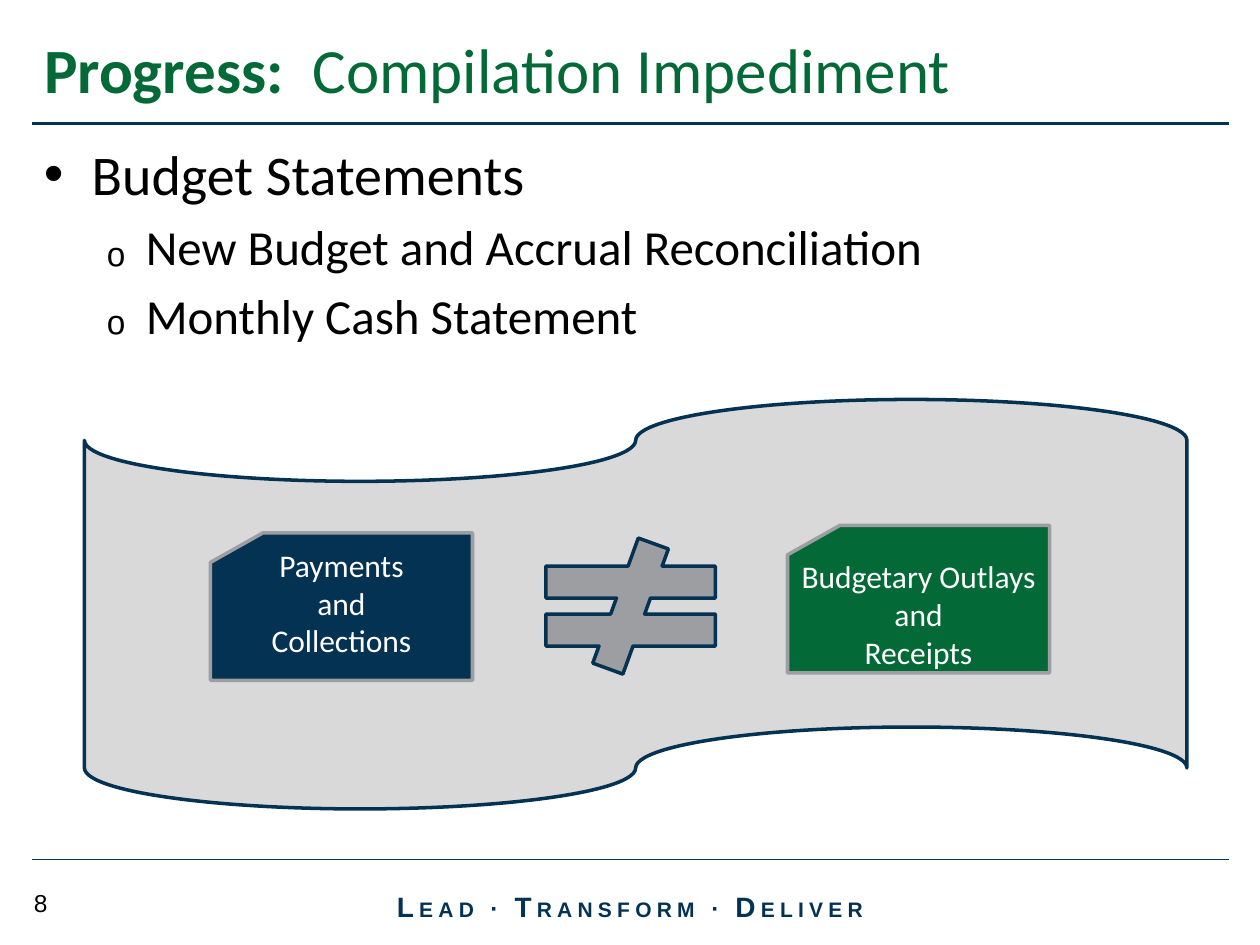
import pptx
import pptx.dml.color
import pptx.enum.shapes
import pptx.enum.text
import pptx.oxml
import pptx.oxml.ns
import pptx.util

RGB = pptx.dml.color.RGBColor
Pt = pptx.util.Pt
Shape = pptx.enum.shapes.MSO_SHAPE
Align = pptx.enum.text.PP_ALIGN
Anchor = pptx.enum.text.MSO_ANCHOR

NAVY = RGB(0x04, 0x32, 0x53)
GREEN = RGB(0x03, 0x6A, 0x37)
GRAY = RGB(0x9C, 0x9E, 0xA2)
PALE = RGB(0xD9, 0xD9, 0xD9)
BLACK = RGB(0, 0, 0)
WHITE = RGB(255, 255, 255)

COLS, ROWS = 40, 30


def style(item, form):
    for key, value in form.items():
        setattr(item, key, value)


class Page:
    """Holds the slide and its grid of quarter-inch cells."""

    def __init__(self, deck):
        self.cell_w = deck.slide_width / COLS
        self.cell_h = deck.slide_height / ROWS
        self.slide = deck.slides.add_slide(deck.slide_layouts[5])
        self.shapes = self.slide.shapes

    def grid(self, x, y, *size):
        units = (self.cell_w, self.cell_h) * 2
        return [round(n * u) for n, u in zip((x, y, *size), units)]

    def runs(self, par, parts, color, face="Calibri"):
        """Add (text, size, bold) parts to a paragraph."""
        for text, size, bold in parts:
            run = par.add_run()
            run.text = text
            style(run.font, {"name": face, "size": Pt(size), "bold": bold})
            run.font.color.rgb = color
            yield run

    def title(self, box, parts):
        head = self.shapes.title
        style(head, dict(zip(("left", "top", "width", "height"), self.grid(*box))))
        frame = head.text_frame
        style(frame, {"vertical_anchor": Anchor.MIDDLE, "word_wrap": True})
        par = frame.paragraphs[0]
        par.alignment = Align.LEFT
        list(self.runs(par, parts, GREEN))

    def text(self, box, anchor=Anchor.TOP):
        frame = self.shapes.add_textbox(*self.grid(*box)).text_frame
        style(frame, {"word_wrap": True, "vertical_anchor": anchor})
        return frame

    def label(self, box, parts, color, align, anchor, track=0):
        par = self.text(box, anchor).paragraphs[0]
        par.alignment = align
        for run in self.runs(par, parts, color, "Arial"):
            if track:
                run.font._element.set("spc", str(track))

    def bullets(self, box, items):
        """Add (level, mark, size, text) items as a list."""
        indents = ((0.38, 0.38), (0.81, 0.31))
        frame = self.text(box)
        for i, (level, mark, size, text) in enumerate(items):
            par = frame.add_paragraph() if i else frame.paragraphs[0]
            par.level = level
            props = par._p.get_or_add_pPr()
            left, hang = (pptx.util.Inches(n) for n in indents[level])
            props.set("marL", str(left))
            props.set("indent", str(-hang))
            for tag, key, value in (("buFont", "typeface", "Arial"),
                                    ("buChar", "char", mark)):
                node = pptx.oxml.parse_xml(
                    f"<a:{tag} {pptx.oxml.ns.nsdecls('a')}/>")
                node.set(key, value)
                props.append(node)
            if i:
                par.space_before = Pt(size * 0.2)
            list(self.runs(par, [(text, size, False)], BLACK))

    def rule(self, row, weight):
        start, end = self.grid(1, row), self.grid(COLS - 1, row)
        line = self.shapes.add_connector(
            pptx.enum.shapes.MSO_CONNECTOR.STRAIGHT, *start, *end)
        line.line.color.rgb = NAVY
        line.line.width = Pt(weight)
        line._element.spPr.append(pptx.oxml.parse_xml(
            f"<a:effectLst {pptx.oxml.ns.nsdecls('a')}/>"))

    def shape(self, kind, box, fill, edge):
        item = self.shapes.add_shape(kind, *self.grid(*box))
        item.shadow.inherit = False
        item.fill.solid()
        item.fill.fore_color.rgb = fill
        item.line.color.rgb = edge
        item.line.width = Pt(2)
        return item

    def card(self, x, y, fill, lines, base=0.05):
        """Add a punched card; base is its bottom inset in inches."""
        box = (x, y, 8.32, 4.68)
        frame = self.shape(Shape.FLOWCHART_CARD, box, fill, GRAY).text_frame
        side = pptx.util.Inches(0.05)
        style(frame, {"word_wrap": True, "vertical_anchor": Anchor.MIDDLE,
                      "margin_left": side, "margin_right": side,
                      "margin_bottom": pptx.util.Inches(base)})
        for i, line in enumerate(lines):
            par = frame.add_paragraph() if i else frame.paragraphs[0]
            par.alignment = Align.CENTER
            list(self.runs(par, [(line, 18, False)], WHITE))


def main():
    deck = pptx.Presentation()
    deck.slide_width = pptx.util.Inches(10)
    deck.slide_height = pptx.util.Inches(7.5)
    page = Page(deck)

    page.rule(27.28, 0.75)
    motto = [("L", 16, True), ("EAD ", 12, True), ("∙ ", 14, True),
             ("T", 16, True), ("RANSFORM ", 12, True), ("∙ ", 14, True),
             ("D", 16, True), ("ELIVER", 12, True)]
    page.label((11.32, 27.96, 17.36, 1.6), motto, NAVY,
               Align.CENTER, Anchor.MIDDLE, 300)
    page.rule(3.92, 2.25)
    page.label((0.68, 28, 5, 1.32), [("8", 14, False)], BLACK,
               Align.LEFT, Anchor.TOP)

    page.bullets((1, 4.24, 38, 8), [
        (0, "•", 32, "Budget Statements"),
        (1, "ₒ", 28, "New Budget and Accrual Reconciliation"),
        (1, "ₒ", 28, "Monthly Cash Statement")])
    page.title((1, 0.68, 38, 3), [("Progress:  ", 36, True),
                                  ("Compilation Impediment", 36, False)])

    page.shape(Shape.FLOWCHART_PUNCHED_TAPE, (2.68, 12.68, 35, 13), PALE, NAVY)
    page.card(6.68, 16.92, NAVY, ("Payments", "and", "Collections"), 0.35)
    page.card(25, 16.68, GREEN, ("Budgetary Outlays", "and", "Receipts"))
    page.shape(Shape.MATH_NOT_EQUAL, (16.36, 17.08, 7.32, 4.32), GRAY, NAVY)
    deck.save("out.pptx")


if __name__ == "__main__":
    main()
